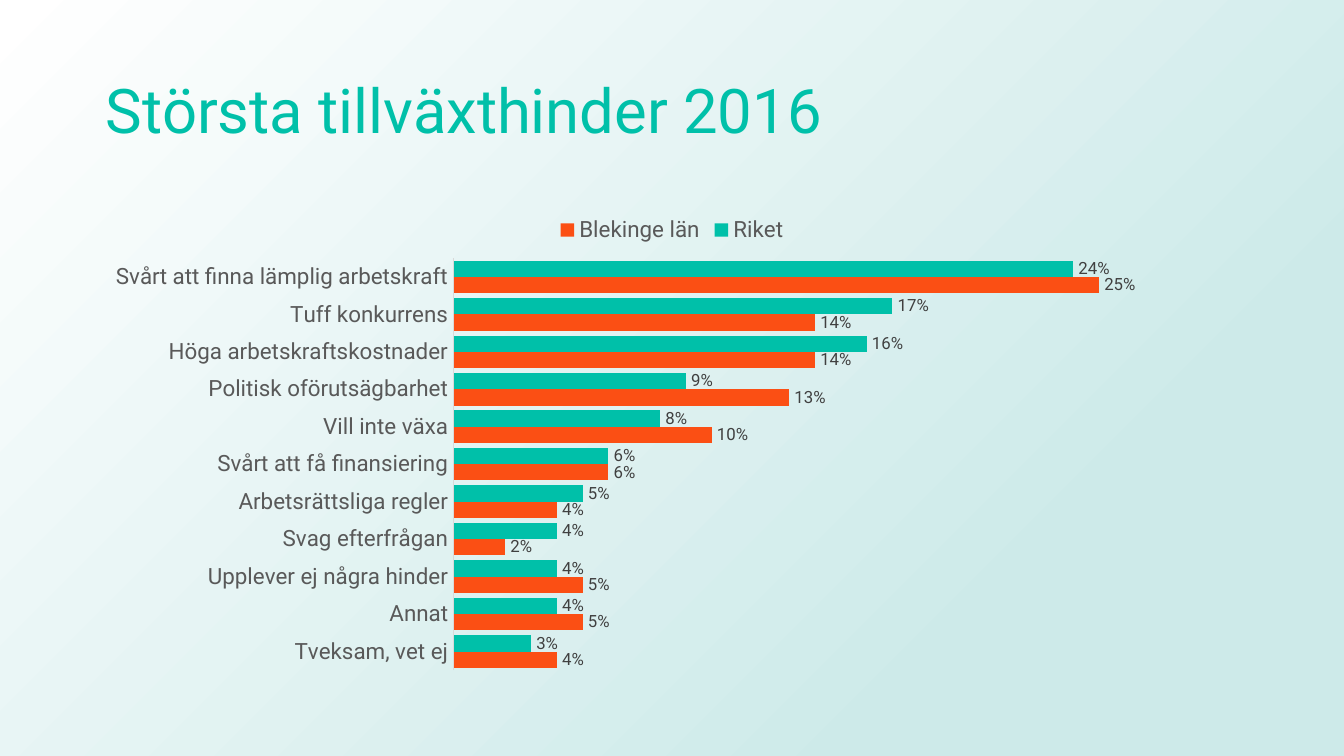
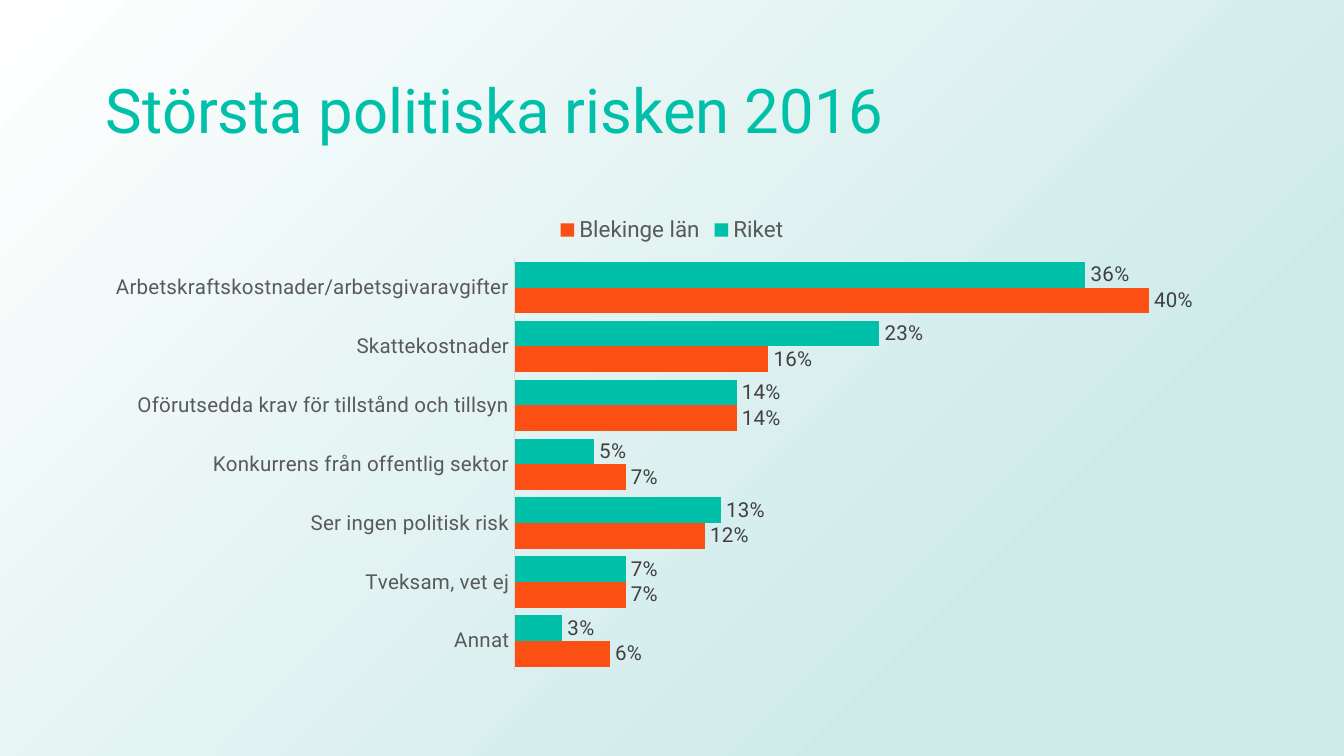
import pptx
import pptx.chart.data
import pptx.dml.color
import pptx.enum.chart
import pptx.enum.shapes
import pptx.enum.text
import pptx.oxml
import pptx.oxml.ns
import pptx.util

Inches = pptx.util.Inches
Pt = pptx.util.Pt

SLIDE_SIZE = (10, 10 * 9 / 16)
TITLE_BOX = (0.69, 0.3, 8.62, 1.09)
CHART_BOX = (0.69, 1.5, 8.62, 3.56)
FONT = "Roboto"
TEAL = "00C0A9"
ORANGE = "FB4F14"
MIST = "CDEAE9"
WHITE = "FFFFFF"
AXIS_TEXT = "595959"
LABEL_TEXT = "404040"
AXIS_LINE = "D9D9D9"

GROWTH_OBSTACLES = [
    ("Svårt att finna lämplig arbetskraft", 0.24, 0.25),
    ("Tuff konkurrens", 0.17, 0.14),
    ("Höga arbetskraftskostnader", 0.16, 0.14),
    ("Politisk oförutsägbarhet", 0.09, 0.13),
    ("Vill inte växa", 0.08, 0.10),
    ("Svårt att få finansiering", 0.06, 0.06),
    ("Arbetsrättsliga regler", 0.05, 0.04),
    ("Svag efterfrågan", 0.04, 0.02),
    ("Upplever ej några hinder", 0.04, 0.05),
    ("Annat", 0.04, 0.05),
    ("Tveksam, vet ej", 0.03, 0.04),
]
POLITICAL_RISKS = [
    ("Arbetskraftskostnader/arbetsgivaravgifter", 0.36, 0.40),
    ("Skattekostnader", 0.23, 0.16),
    ("Oförutsedda krav för tillstånd och tillsyn", 0.14, 0.14),
    ("Konkurrens från offentlig sektor", 0.05, 0.07),
    ("Ser ingen politisk risk", 0.13, 0.12),
    ("Tveksam, vet ej", 0.07, 0.07),
    ("Annat", 0.03, 0.06),
]


def rgb(value):
    return pptx.dml.color.RGBColor.from_string(value)


def set_font(font, size, color, name=FONT):
    font.name = name
    font.size = Pt(size)
    font.color.rgb = rgb(color)


def add_master_background(presentation, slide):
    """Draw the gradient on a slide, then move it to the back of the master."""
    shape = slide.shapes.add_shape(
        pptx.enum.shapes.MSO_SHAPE.RECTANGLE, 0, 0, *map(Inches, SLIDE_SIZE))
    shape.shadow.inherit = False
    shape.line.fill.background()
    gradient = pptx.oxml.parse_xml(
        f'<a:gradFill {pptx.oxml.ns.nsdecls("a")} rotWithShape="1"><a:gsLst>'
        f'<a:gs pos="23000"><a:srgbClr val="{MIST}"/></a:gs>'
        f'<a:gs pos="100000"><a:srgbClr val="{WHITE}"/></a:gs></a:gsLst>'
        '<a:path path="circle"><a:fillToRect l="100000" t="100000"/></a:path>'
        '</a:gradFill>')
    geometry = shape._element.spPr.find(pptx.oxml.ns.qn("a:prstGeom"))
    geometry.addnext(gradient)
    presentation.slide_master.shapes._spTree.insert(2, shape._element)


def add_title(slide, box, text):
    frame = slide.shapes.add_textbox(*map(Inches, box)).text_frame
    frame.word_wrap = True
    frame.vertical_anchor = pptx.enum.text.MSO_ANCHOR.MIDDLE
    paragraph = frame.paragraphs[0]
    paragraph.text = text
    paragraph.line_spacing = 0.9
    set_font(paragraph.font, 33, TEAL)


def add_comparison_chart(slide, box, rows, maximum, category_size, label_size):
    """Compare the country and the county in horizontal bars."""
    categories, country, county = zip(*rows)
    data = pptx.chart.data.CategoryChartData(number_format="0%")
    data.categories = categories
    data.add_series("Riket", country)
    data.add_series("Blekinge län", county)
    chart = slide.shapes.add_chart(
        pptx.enum.chart.XL_CHART_TYPE.BAR_CLUSTERED, *map(Inches, box), data).chart
    set_font(chart.font, 10, "000000", "Calibri")
    chart.has_title = False
    chart.has_legend = True
    chart.legend.position = pptx.enum.chart.XL_LEGEND_POSITION.TOP
    chart.legend.include_in_layout = False
    set_font(chart.legend.font, 12, AXIS_TEXT)

    axis = chart.category_axis
    axis.reverse_order = True
    axis.major_tick_mark = pptx.enum.chart.XL_TICK_MARK.NONE
    axis.minor_tick_mark = pptx.enum.chart.XL_TICK_MARK.NONE
    axis.format.line.color.rgb = rgb(AXIS_LINE)
    axis.format.line.width = Pt(0.75)
    set_font(axis.tick_labels.font, category_size, AXIS_TEXT)

    values = chart.value_axis
    values.visible = False
    values.has_major_gridlines = False
    values.minimum_scale = 0
    values.maximum_scale = maximum

    plot = chart.plots[0]
    plot.gap_width = 30
    plot.vary_by_categories = False
    for series, color in zip(plot.series, (TEAL, ORANGE)):
        series.format.fill.solid()
        series.format.fill.fore_color.rgb = rgb(color)
        series.invert_if_negative = False
        labels = series.data_labels
        labels.show_value = True
        labels.number_format = "0%"
        labels.number_format_is_linked = False
        labels.position = pptx.enum.chart.XL_LABEL_POSITION.OUTSIDE_END
        set_font(labels.font, label_size, LABEL_TEXT)


def add_chart_slide(presentation, title, *chart_settings):
    slide = presentation.slides.add_slide(presentation.slide_layouts[6])
    add_title(slide, TITLE_BOX, title)
    add_comparison_chart(slide, CHART_BOX, *chart_settings)
    return slide


def main():
    presentation = pptx.Presentation()
    presentation.slide_width, presentation.slide_height = map(Inches, SLIDE_SIZE)
    slide = add_chart_slide(
        presentation, "Största tillväxthinder 2016", GROWTH_OBSTACLES, 0.3, 12, 9)
    add_master_background(presentation, slide)
    add_chart_slide(
        presentation, "Största politiska risken 2016", POLITICAL_RISKS, 0.45, 11, 11)
    presentation.save("out.pptx")


if __name__ == "__main__":
    main()
